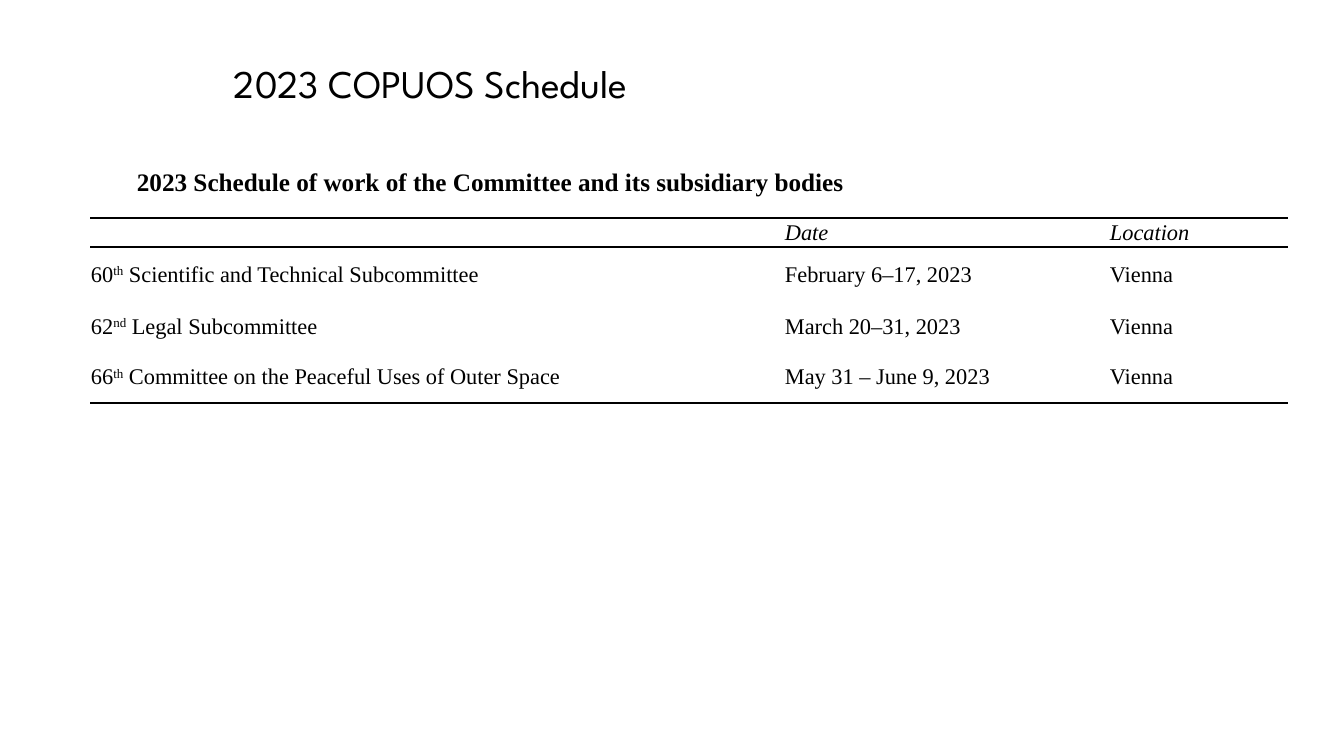
import pptx
import pptx.dml.color
import pptx.enum.text
import pptx.oxml
import pptx.oxml.ns
import pptx.util

COLORS = {"ink": "000000", "page": "FFFFFF"}
SERIF = "Times New Roman"
COLS = [694, 325, 179]
ROWS = [58, 29, 55, 49, 52]
RULES = [0, 1, 2.25, 0, 0, 2.25]
BODY = [
    [[""], [""], [""]],
    [[""], ["Date"], ["Location"]],
    [["60", "th", " Scientific and Technical Subcommittee"],
     ["February 6–17, 2023"], ["Vienna"]],
    [["62", "nd", " Legal Subcommittee"], ["March 20–31, 2023"], ["Vienna"]],
    [["66", "th", " Committee on the Peaceful Uses of Outer Space"],
     ["May 31 – June 9, 2023"], ["Vienna"]],
]


def px(n):
    """Turn px into EMU."""
    return pptx.util.Emu(round(n * 914400 / 100.8))


def color(name):
    """Look up a named colour."""
    return pptx.dml.color.RGBColor.from_string(COLORS[name])


def style(para, size, face=SERIF, bold=False, slant=False):
    """Set the font of a paragraph."""
    font = para.font
    font.size = pptx.util.Pt(size)
    font.name = face
    font.bold = bold
    font.italic = slant
    font.color.rgb = color("ink")


def add_text(slide, box, text, tab=0, **look):
    """Add a one-line text box."""
    frame = slide.shapes.add_textbox(*map(px, box)).text_frame
    frame.word_wrap = True
    para = frame.paragraphs[0]
    para.text = text
    if tab:
        stops = pptx.oxml.parse_xml(
            f'<a:tabLst {pptx.oxml.ns.nsdecls("a")}>'
            f'<a:tab pos="{px(tab)}" algn="l"/></a:tabLst>')
        para._p.get_or_add_pPr().append(stops)
    style(para, **look)


def set_edge(cell, index, side, width):
    """Draw one cell border, or none at zero width."""
    paint = (f'<a:solidFill><a:srgbClr val="{COLORS["ink"]}"/></a:solidFill>'
             if width else "<a:noFill/>")
    line = pptx.oxml.parse_xml(
        f'<a:ln{side} {pptx.oxml.ns.nsdecls("a")} '
        f'w="{pptx.util.Pt(width)}">{paint}</a:ln{side}>')
    cell._tc.get_or_add_tcPr().insert(index, line)


def fill_cell(cell, parts, row):
    """Write a cell, raising its second part, and rule its edges."""
    cell.fill.background()
    cell.vertical_anchor = pptx.enum.text.MSO_ANCHOR.MIDDLE
    cell.margin_left = cell.margin_right = cell.margin_top = px(1)
    cell.margin_bottom = 0
    para = cell.text_frame.paragraphs[0]
    for part in filter(None, parts):
        para.add_run().text = part
    if len(parts) > 1:
        para.runs[1].font._element.set("baseline", "30000")
    style(para, 16, slant=row == 1)
    edges = {"L": 0, "R": 0, "T": RULES[row], "B": RULES[row + 1]}
    for index, (side, width) in enumerate(edges.items()):
        set_edge(cell, index, side, width)


def add_grid(slide, left, top):
    """Add the schedule table."""
    box = map(px, (left, top, sum(COLS), sum(ROWS)))
    table = slide.shapes.add_table(len(ROWS), len(COLS), *box).table
    table.first_row = table.horz_banding = False
    for col, width in zip(table.columns, COLS):
        col.width = px(width)
    for row, (line, height) in enumerate(zip(BODY, ROWS)):
        table.rows[row].height = px(height)
        for col, parts in enumerate(line):
            fill_cell(table.cell(row, col), parts, row)


def main():
    """Build and save the slide."""
    deck = pptx.Presentation()
    deck.slide_width, deck.slide_height = px(1344), px(756)
    slide = deck.slides.add_slide(deck.slide_layouts[6])
    back = slide.background.fill
    back.solid()
    back.fore_color.rgb = color("page")
    add_grid(slide, 90, 160)
    add_text(slide, (127, 161, 971, 40),
             "2023 Schedule of work of the Committee and its subsidiary bodies",
             size=18, bold=True)
    add_text(slide, (123, 54, 1221, 57), "\t2023 COPUOS Schedule",
             tab=101, size=28, face="League Spartan")
    deck.save("out.pptx")


if __name__ == "__main__":
    main()
